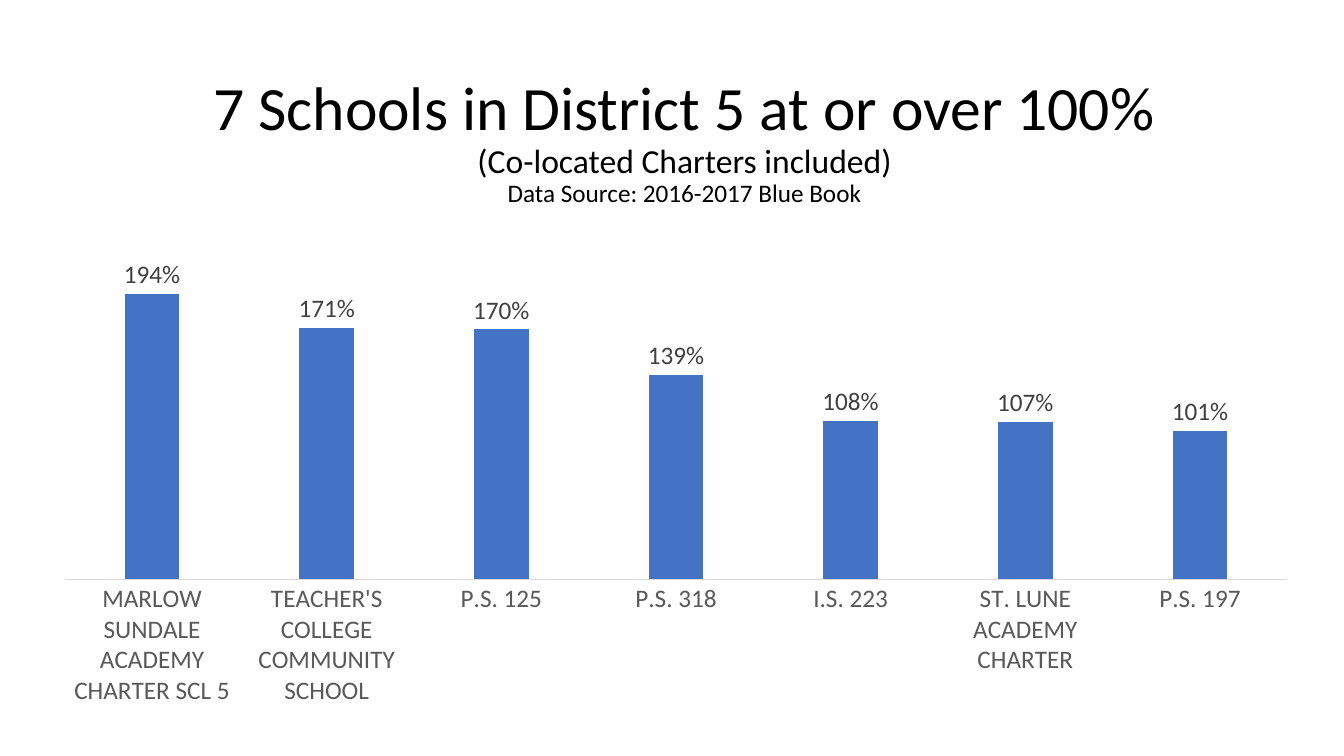
import dataclasses
import typing

import pptx
import pptx.chart.data
import pptx.dml.color
import pptx.enum.chart
import pptx.enum.text
import pptx.util

Inches = pptx.util.Inches


@dataclasses.dataclass(frozen=True)
class Theme:
    font: str = "Calibri"
    black: str = "000000"
    bar: str = "4472C4"
    label: str = "404040"
    names: str = "595959"
    rule: str = "D9D9D9"
    head: int = 44
    sub: int = 24
    note: int = 18
    chart: int = 10


class Line(typing.NamedTuple):
    text: str
    size: int


class School(typing.NamedTuple):
    name: str
    rate: float


THEME = Theme()

LINES = [
    Line("7 Schools in District 5 at or over 100%", THEME.head),
    Line("(Co-located Charters included)", THEME.sub),
    Line("Data Source: 2016-2017 Blue Book", THEME.note),
]

SCHOOLS = [
    School("MARLOW SUNDALE ACADEMY CHARTER SCL 5", 1.94),
    School("TEACHER'S COLLEGE COMMUNITY SCHOOL", 1.71),
    School("P.S. 125", 1.7),
    School("P.S. 318", 1.39),
    School("I.S. 223", 1.08),
    School("ST. LUNE ACADEMY CHARTER", 1.07),
    School("P.S. 197", 1.01),
]


def apply(item: typing.Any, values: dict[str, typing.Any]) -> None:
    for key, value in values.items():
        setattr(item, key, value)


def color(code: str) -> pptx.dml.color.RGBColor:
    return pptx.dml.color.RGBColor.from_string(code)


def style(font: typing.Any, size: int, code: str) -> None:
    apply(font, {"name": THEME.font, "size": pptx.util.Pt(size), "bold": False})
    font.color.rgb = color(code)


def add_title(slide: typing.Any, lines: list[Line]) -> None:
    box = slide.shapes.add_textbox(
        Inches(1.04), Inches(0.69), Inches(11.5), Inches(1.45))
    frame = box.text_frame
    apply(frame, {
        "word_wrap": True,
        "vertical_anchor": pptx.enum.text.MSO_ANCHOR.MIDDLE,
    })
    para = frame.paragraphs[0]
    apply(para, {
        "alignment": pptx.enum.text.PP_ALIGN.CENTER,
        "line_spacing": 0.9,
    })
    for index, line in enumerate(lines):
        if index:
            para.add_line_break()
        run = para.add_run()
        run.text = line.text
        style(run.font, line.size, THEME.black)


def add_bars(slide: typing.Any, schools: list[School]) -> None:
    data = pptx.chart.data.CategoryChartData(number_format="0%")
    data.categories = [school.name for school in schools]
    data.add_series("Series 1", [school.rate for school in schools])
    chart = slide.shapes.add_chart(
        pptx.enum.chart.XL_CHART_TYPE.COLUMN_CLUSTERED,
        Inches(0.39), Inches(2), Inches(12.63), Inches(5.1), data).chart
    apply(chart, {"has_legend": False, "has_title": False})
    style(chart.font, THEME.chart, THEME.black)

    # Bars and their labels
    plot = chart.plots[0]
    apply(plot, {
        "gap_width": 219,
        "overlap": -27,
        "vary_by_categories": False,
        "has_data_labels": True,
    })
    fill = plot.series[0].format.fill
    fill.solid()
    fill.fore_color.rgb = color(THEME.bar)
    labels = plot.data_labels
    apply(labels, {
        "show_value": True,
        "number_format": "0%",
        "number_format_is_linked": False,
        "position": pptx.enum.chart.XL_LABEL_POSITION.OUTSIDE_END,
    })
    style(labels.font, THEME.note, THEME.label)

    # Axes
    none = pptx.enum.chart.XL_TICK_MARK.NONE
    names = chart.category_axis
    apply(names, {"major_tick_mark": none, "minor_tick_mark": none})
    style(names.tick_labels.font, THEME.note, THEME.names)
    names.format.line.width = pptx.util.Pt(0.75)
    names.format.line.color.rgb = color(THEME.rule)
    apply(chart.value_axis, {
        "visible": False,
        "has_major_gridlines": False,
        "minimum_scale": 0,
        "maximum_scale": 2.5,
    })


def main() -> None:
    deck = pptx.Presentation()
    apply(deck, {"slide_width": Inches(13.33), "slide_height": Inches(7.5)})
    slide = deck.slides.add_slide(deck.slide_layouts[6])
    add_title(slide, LINES)
    add_bars(slide, SCHOOLS)
    deck.save("out.pptx")


if __name__ == "__main__":
    main()
